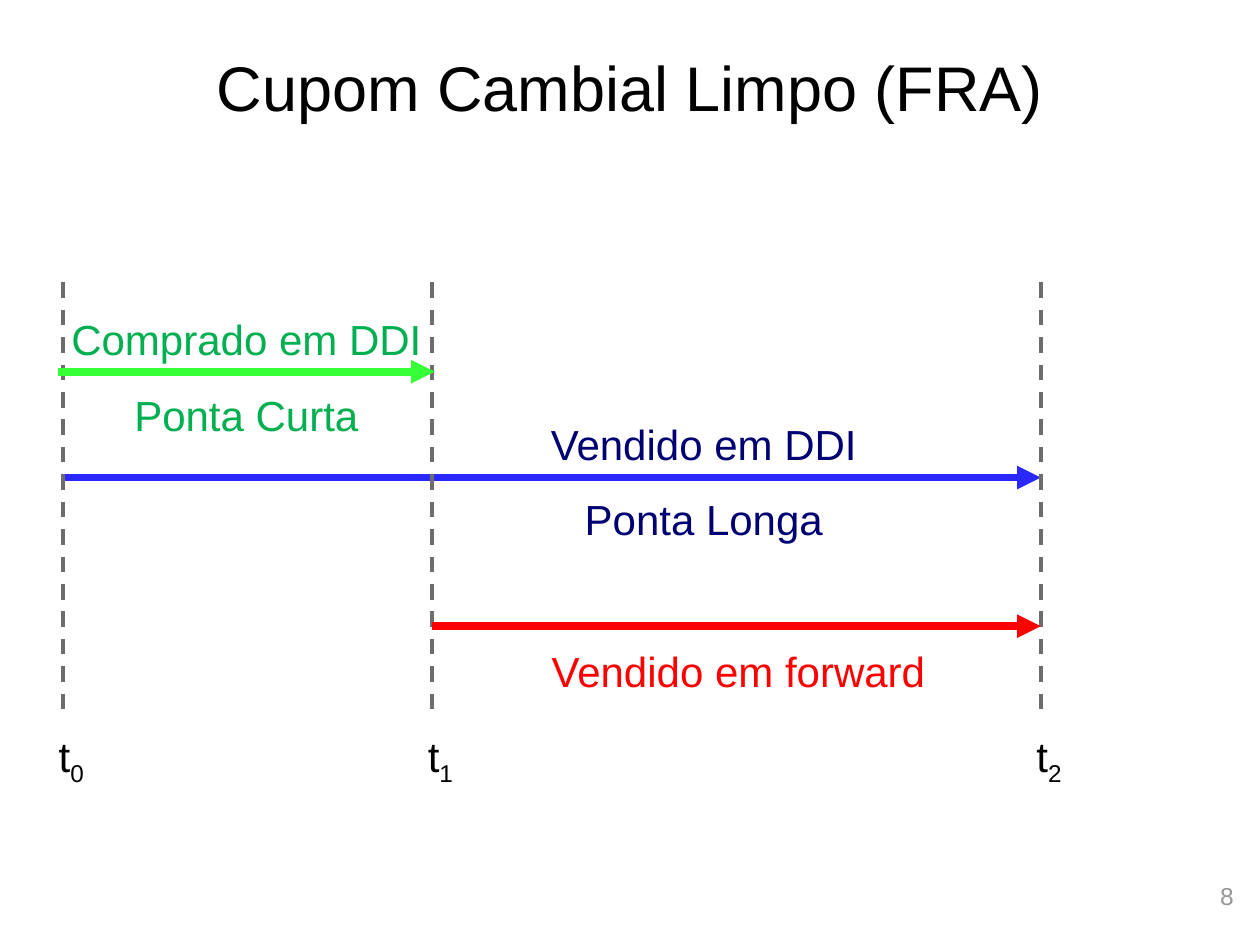
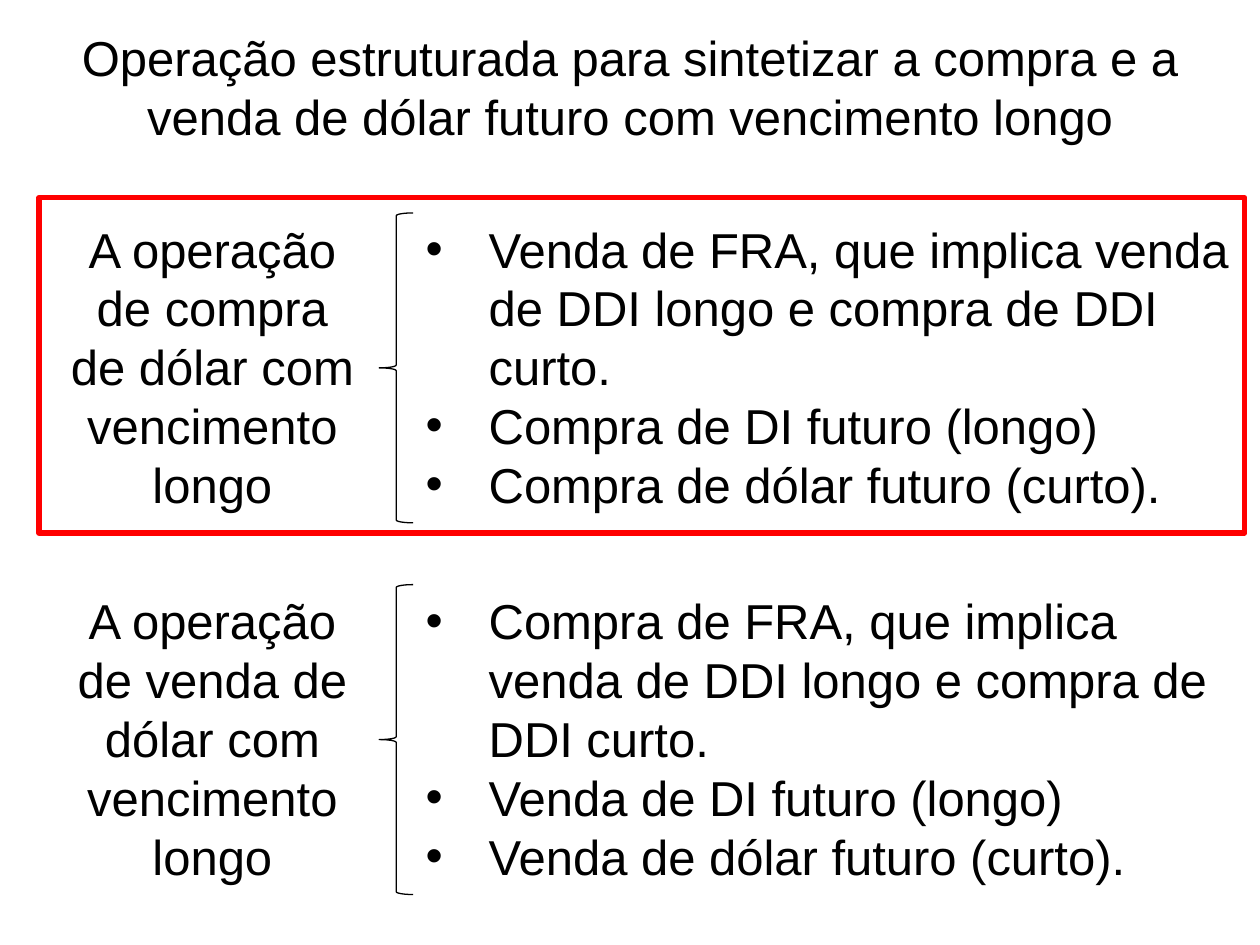
from pptx import Presentation
from pptx.dml.color import RGBColor
from pptx.enum.dml import MSO_LINE
from pptx.enum.shapes import MSO_CONNECTOR, MSO_SHAPE
from pptx.enum.text import MSO_ANCHOR, PP_ALIGN
from pptx.oxml.ns import qn
from pptx.util import Pt
from lxml import etree

PX = 9144  # 100 px to the inch
FONT = "Arial"
LEFT, CENTER, RIGHT = PP_ALIGN.LEFT, PP_ALIGN.CENTER, PP_ALIGN.RIGHT
TOP, MIDDLE = MSO_ANCHOR.TOP, MSO_ANCHOR.MIDDLE
STRAIGHT, DASH = MSO_CONNECTOR.STRAIGHT, MSO_LINE.DASH
BRACE, RECTANGLE = MSO_SHAPE.LEFT_BRACE, MSO_SHAPE.RECTANGLE

BLACK = RGBColor(0x00, 0x00, 0x00)
PAGE_GRAY = RGBColor(0x96, 0x96, 0x96)
DATE_GRAY = RGBColor(0x6D, 0x6D, 0x6D)
RED = RGBColor(0xFF, 0x00, 0x00)
BLUE = RGBColor(0x29, 0x29, 0xFF)
NAVY = RGBColor(0x00, 0x00, 0x73)
LIME = RGBColor(0x37, 0xFF, 0x37)
GREEN = RGBColor(0x00, 0xB0, 0x50)

# Diagram: x of the three dates, and the span of their dashed lines
DATES = [50, 343, 826]
DATE_TOP, DATE_BOTTOM = 224, 568

# Operations: description, its legs, and the top of the row
OPERATIONS = [
    ("A operação de compra de dólar com vencimento longo",
     ["Venda de FRA, que implica venda de DDI longo e compra de DDI curto.",
      "Compra de DI futuro (longo)",
      "Compra de dólar futuro (curto)."], 169),
    ("A operação de venda de dólar com vencimento longo",
     ["Compra de FRA, que implica venda de DDI longo e compra de DDI curto.",
      "Venda de DI futuro (longo)",
      "Venda de dólar futuro (curto)."], 464),
]
ROW_HEIGHT = 246


def emu(*lengths):
    return [length * PX for length in lengths]


def add_text(slide, box, lines, size, color=BLACK, align=CENTER,
             anchor=TOP, spacing=None):
    """Add a text box with one paragraph per line; return its paragraphs."""
    frame = slide.shapes.add_textbox(*emu(*box)).text_frame
    frame.word_wrap = True
    frame.vertical_anchor = anchor
    frame.text = "\n".join(lines)
    for paragraph in frame.paragraphs:
        paragraph.alignment = align
        paragraph.line_spacing = spacing
        for run in paragraph.runs:
            style_run(run, size, color)
    return frame.paragraphs


def style_run(run, size, color):
    run.font.name = FONT
    run.font.size = Pt(size)
    run.font.color.rgb = color


def add_title(slide, title, size):
    add_text(slide, (50, 30, 900, 77), [title], size, anchor=MIDDLE)


def add_line(slide, start, end, color, width):
    line = slide.shapes.add_connector(STRAIGHT, *emu(*start, *end))
    line.line.color.rgb = color
    line.line.width = Pt(width)
    etree.SubElement(line._element.spPr, qn("a:effectLst"))
    return line


def add_position_arrow(slide, x1, x2, y, color):
    arrow = add_line(slide, (x1, y), (x2, y), color, 4.5)
    head = etree.SubElement(arrow.line._get_or_add_ln(), qn("a:tailEnd"))
    head.set("type", "triangle")


def add_position_label(slide, box, lines, color):
    return add_text(slide, box, lines, 24, color, spacing=1.5)


def add_date_label(slide, x, index):
    paragraph = add_position_label(slide, (x - 16, 552, 45, 71), ["t"], BLACK)[0]
    subscript = paragraph.add_run()
    subscript.text = str(index)
    style_run(subscript, 24, BLACK)
    subscript.font._element.set("baseline", "-25000")


def add_outline(slide, preset, box, color, width):
    outline = slide.shapes.add_shape(preset, *emu(*box))
    outline.shadow.inherit = False
    outline.fill.background()
    outline.line.color.rgb = color
    outline.line.width = Pt(width)


def add_bullet(paragraph, indent):
    properties = paragraph._p.get_or_add_pPr()
    properties.set("marL", str(indent * PX))
    properties.set("indent", str(-indent * PX))
    font = etree.SubElement(properties, qn("a:buFont"))
    font.set("typeface", FONT)
    bullet = etree.SubElement(properties, qn("a:buChar"))
    bullet.set("char", "•")


def add_operation(slide, description, legs, top):
    add_text(slide, (43, top, 251, ROW_HEIGHT), [description], 28)
    for leg in add_text(slide, (328, top, 672, ROW_HEIGHT), legs, 28, align=LEFT):
        add_bullet(leg, 50)
    add_outline(slide, BRACE, (301, top, 27, ROW_HEIGHT), BLACK, 0.75)


def build_forward_diagram(slide):
    add_text(slide, (756, 694, 233, 52), ["8"], 14, PAGE_GRAY, RIGHT)
    add_title(slide, "Cupom Cambial Limpo (FRA)", 36)
    today, short_end, long_end = DATES

    # Long leg lies behind the date lines
    add_position_arrow(slide, today, long_end, 379, BLUE)
    for index, x in enumerate(DATES):
        date_line = add_line(slide, (x, DATE_TOP), (x, DATE_BOTTOM), DATE_GRAY, 2.25)
        date_line.line.dash_style = DASH
        add_date_label(slide, x, index)

    # Short leg and resulting forward
    add_position_arrow(slide, short_end, long_end, 497, RED)
    add_position_arrow(slide, today - 4, short_end + 2, 295, LIME)

    # Names of the positions
    add_position_label(slide, (46, 224, 299, 131),
                       ["Comprado em DDI", "Ponta Curta"], GREEN)
    add_position_label(slide, (409, 307, 299, 131),
                       ["Vendido em DDI", "Ponta Longa"], NAVY)
    add_position_label(slide, (414, 487, 344, 71), ["Vendido em forward"], RED)


def build_operations(slide):
    add_title(slide, "Operação estruturada para sintetizar a compra e a "
                     "venda de dólar futuro com vencimento longo", 28)
    for description, legs, top in OPERATIONS:
        add_operation(slide, description, legs, top)

    # Highlight of the purchase
    add_outline(slide, RECTANGLE, (31, 157, 957, 266), RED, 3)


def main():
    deck = Presentation()
    deck.slide_width, deck.slide_height = emu(1000, 750)
    blank = deck.slide_layouts[6]
    for build in (build_forward_diagram, build_operations):
        build(deck.slides.add_slide(blank))
    deck.save("out.pptx")


if __name__ == "__main__":
    main()
